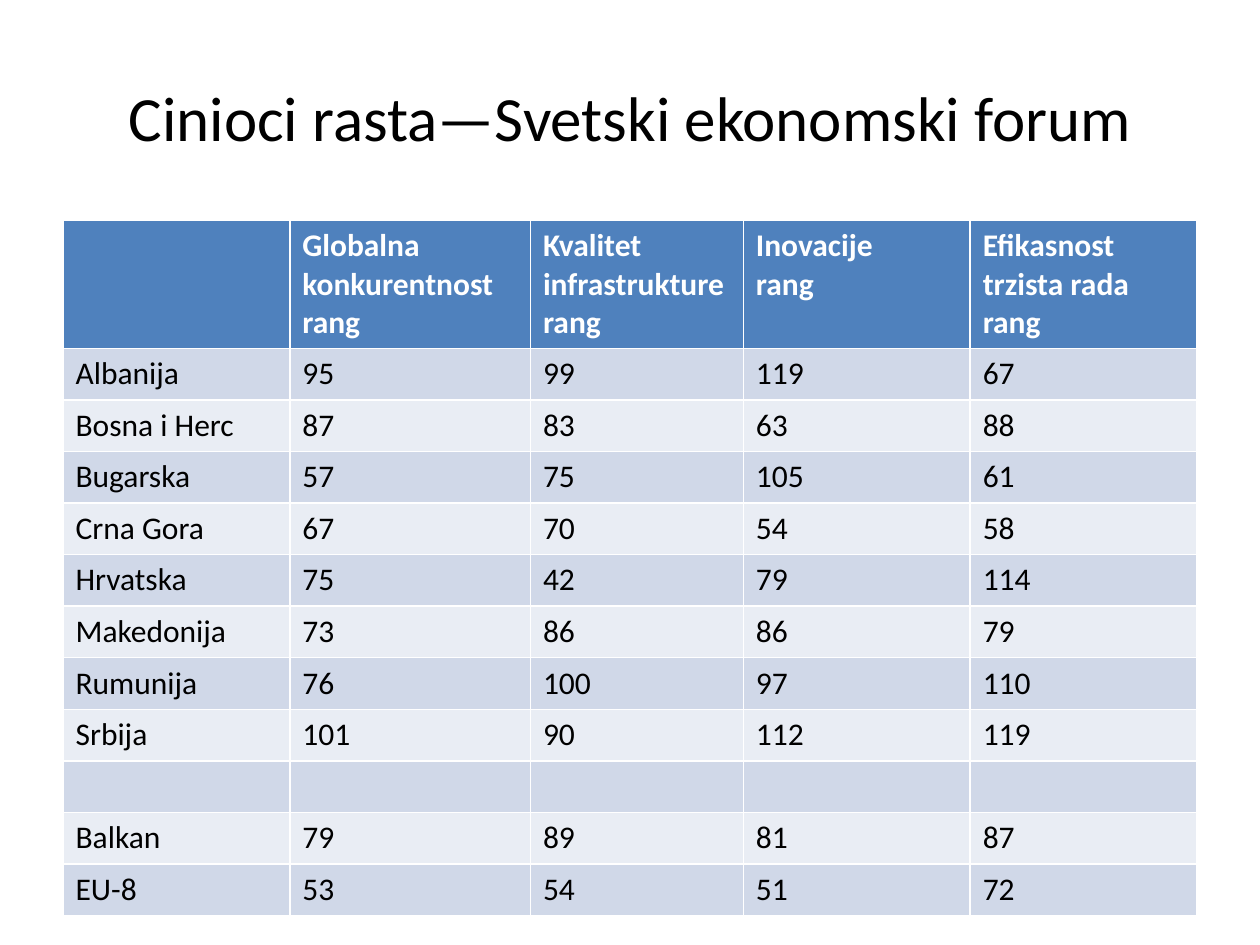
from pptx import Presentation
from pptx.dml.color import RGBColor
from pptx.enum.text import MSO_ANCHOR, PP_ALIGN
from pptx.util import Inches, Pt

TITLE = "Cinioci rasta—Svetski ekonomski forum"
HEADINGS = ["", "Globalna konkurentnost rang", "Kvalitet infrastrukture rang",
            "Inovacije\nrang", "Efikasnost trzista rada rang"]
RANKS = [
    ("Albanija", 95, 99, 119, 67),
    ("Bosna i Herc", 87, 83, 63, 88),
    ("Bugarska", 57, 75, 105, 61),
    ("Crna Gora", 67, 70, 54, 58),
    ("Hrvatska", 75, 42, 79, 114),
    ("Makedonija", 73, 86, 86, 79),
    ("Rumunija", 76, 100, 97, 110),
    ("Srbija", 101, 90, 112, 119),
    ("",) * 5,
    ("Balkan", 79, 89, 81, 87),
    ("EU-8", 53, 54, 51, 72),
]
COLUMN_SHARES = [0.18, 0.191, 0.169, 0.18, 0.18]


def color(hex_value):
    return RGBColor.from_string(hex_value)


class RankingSlide:
    """Holds the style and the current slide, with lengths as shares of its size."""

    font = "Calibri"
    ink, paper = "000000", "FFFFFF"
    header_fill, bands = "4F81BD", ("D0D8E8", "E9EDF4")
    title_size, table_size = 36, 18

    def __init__(self, deck):
        self.width, self.height = deck.slide_width, deck.slide_height
        self.slide = deck.slides.add_slide(deck.slide_layouts[5])

    def box(self, left, top, width, height):
        return (int(left * self.width), int(top * self.height),
                int(width * self.width), int(height * self.height))

    def style(self, paragraph, size, ink, bold=False):
        font = paragraph.font
        font.name, font.size, font.bold = self.font, Pt(size), bold
        font.color.rgb = color(ink)

    def title(self, text, *shares):
        heading = self.slide.shapes.title
        heading.left, heading.top, heading.width, heading.height = self.box(*shares)
        frame = heading.text_frame
        frame.text = text
        frame.vertical_anchor = MSO_ANCHOR.MIDDLE
        frame.paragraphs[0].alignment = PP_ALIGN.CENTER
        self.style(frame.paragraphs[0], self.title_size, self.ink)

    def table(self, headings, records, column_shares, header_share, *shares):
        rows = [headings, *records]
        area = self.box(*shares)
        grid = self.slide.shapes.add_table(len(rows), len(headings), *area).table
        for column, share in zip(grid.columns, column_shares):
            column.width = int(share * self.width)
        header_height = int(header_share * self.height)
        for index, row in enumerate(grid.rows):
            row.height = (area[3] - header_height) // len(records) if index else header_height
            fill = self.bands[(index - 1) % 2] if index else self.header_fill
            for cell, value in zip(row.cells, rows[index]):
                self.cell(cell, str(value), fill, header=index == 0)

    def cell(self, cell, text, fill, header):
        cell.text = text
        cell.fill.solid()
        cell.fill.fore_color.rgb = color(fill)
        for paragraph in cell.text_frame.paragraphs:
            self.style(paragraph, self.table_size, self.paper if header else self.ink, header)


def main():
    deck = Presentation()
    deck.slide_width, deck.slide_height = Inches(10), Inches(7.5)
    ranking = RankingSlide(deck)
    ranking.title(TITLE, 0.05, 0.04, 0.9, 1 / 6)
    ranking.table(HEADINGS, RANKS, COLUMN_SHARES, 0.13, 0.05, 7 / 30, 0.9, 0.73)
    deck.save("out.pptx")


if __name__ == "__main__":
    main()
